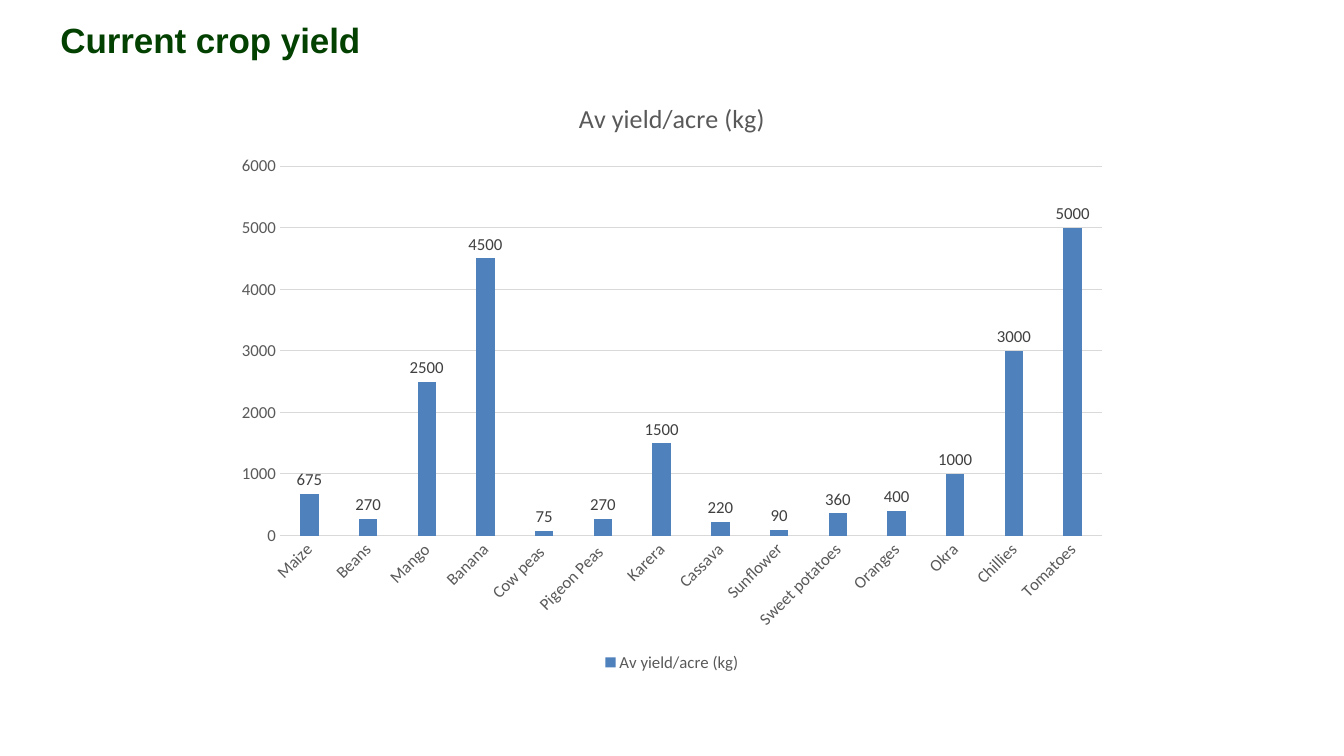
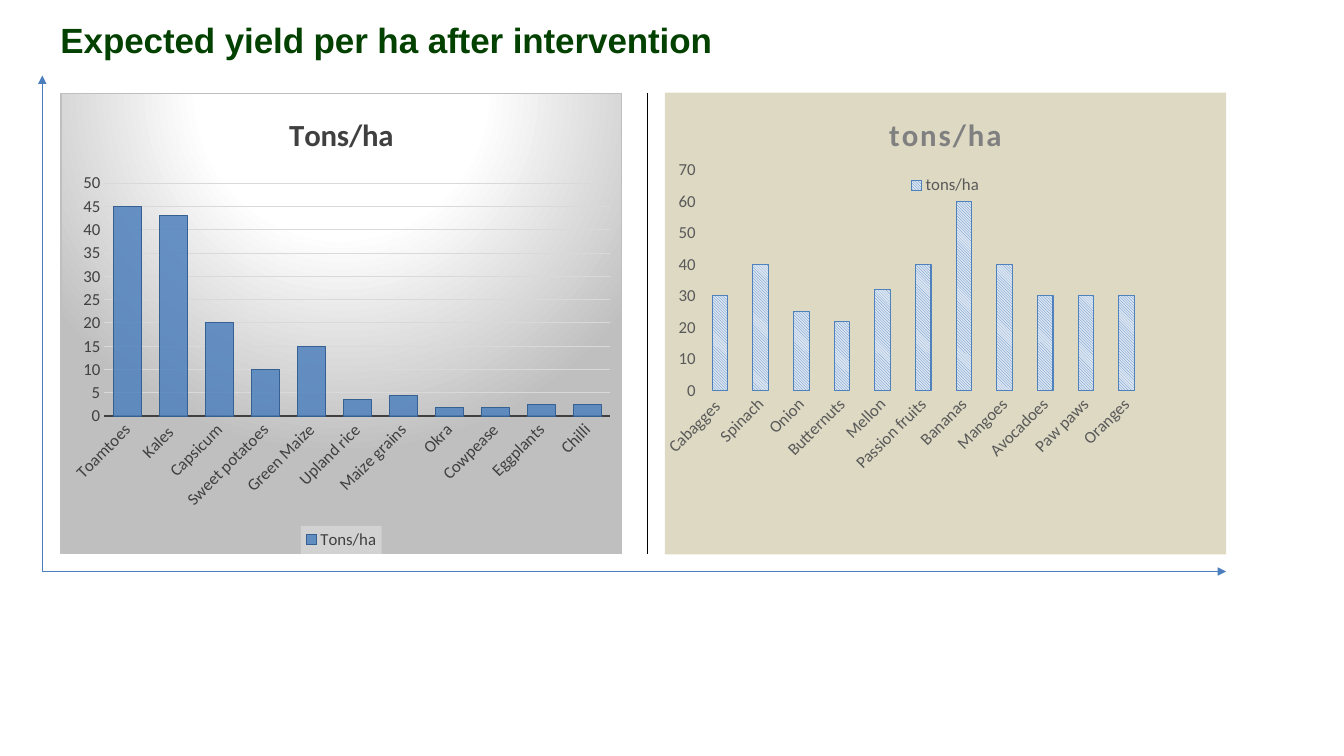
from dataclasses import dataclass
from typing import Optional

from pptx import Presentation
from pptx.chart.data import CategoryChartData
from pptx.dml.color import RGBColor
from pptx.enum.chart import XL_CHART_TYPE as ChartType
from pptx.enum.chart import XL_LABEL_POSITION as LabelPosition
from pptx.enum.chart import XL_LEGEND_POSITION as LegendPosition
from pptx.enum.chart import XL_TICK_MARK as TickMark
from pptx.enum.dml import MSO_PATTERN as Pattern
from pptx.enum.shapes import MSO_CONNECTOR as Connector
from pptx.oxml import parse_xml
from pptx.oxml.ns import nsdecls, qn
from pptx.util import Inches, Pt

# Shared look
GREEN = RGBColor(0x03, 0x41, 0x01)
BLUE = RGBColor(0x4F, 0x81, 0xBD)
DARK_BLUE = RGBColor(0x37, 0x60, 0x92)
PALE_BLUE = RGBColor(0xDC, 0xE6, 0xF2)
ARROW_BLUE = RGBColor(0x4B, 0x7E, 0xBC)
BLACK = RGBColor(0x00, 0x00, 0x00)
CHARCOAL = RGBColor(0x40, 0x40, 0x40)
SLATE = RGBColor(0x59, 0x59, 0x59)
GREY = RGBColor(0x80, 0x80, 0x80)
SILVER = RGBColor(0xBF, 0xBF, 0xBF)
GRID = RGBColor(0xD9, 0xD9, 0xD9)
WHITE = RGBColor(0xFF, 0xFF, 0xFF)
MIST = RGBColor(0xF2, 0xF2, 0xF2)
SAND = RGBColor(0xDD, 0xD9, 0xC3)

TITLE_FONT, CHART_FONT = "Arial", "Calibri"
PAGE_WIDTH, PAGE_HEIGHT = 13.33, 7.5
LEFT_MARGIN = 0.6
HAIRLINE = 0.75
NO_PAINT = "<a:noFill/>"

CURRENT_YIELD = {
    "Maize": 675, "Beans": 270, "Mango": 2500, "Banana": 4500, "Cow peas ": 75,
    "Pigeon Peas ": 270, "Karera": 1500, "Cassava": 220, "Sunflower": 90,
    "Sweet potatoes": 360, "Oranges": 400, "Okra": 1000, "Chillies": 3000,
    "Tomatoes": 5000,
}
FIELD_CROPS = {
    "Toamtoes": 45, "Kales ": 43, "Capsicum": 20, "Sweet potatoes": 10,
    "Green Maize": 15, "Upland rice": 3.5, "Maize grains": 4.5, "Okra": 1.8,
    "Cowpease": 1.8, "Eggplants": 2.5, "Chilli": 2.5,
}
FRUIT_CROPS = {
    "Cabagges ": 30, "Spinach": 40, "Onion": 25, "Butternuts": 22, "Mellon": 32,
    "Passion fruits": 40, "Bananas": 60, "Mangoes": 40, "Avocadoes": 30,
    "Paw paws": 30, "Oranges": 30,
}


@dataclass
class ChartStyle:
    """What differs from one column chart to the next."""
    top: int
    step: int
    gap: int
    overlap: int = 0
    text: RGBColor = SLATE
    title_size: float = 22
    title_color: RGBColor = SLATE
    title_bold: bool = True
    title_spacing: int = 0
    axis_line: Optional[tuple] = None
    grid: bool = True
    labels: bool = False
    legend: LegendPosition = LegendPosition.BOTTOM
    background: str = NO_PAINT
    border: str = NO_PAINT


def solid(color, alpha=100):
    return (f'<a:solidFill><a:srgbClr val="{color}">'
            f'<a:alpha val="{alpha * 1000}"/></a:srgbClr></a:solidFill>')


def glow(stops):
    marks = "".join(f'<a:gs pos="{share * 1000}"><a:srgbClr val="{color}"/></a:gs>'
                    for share, color in stops)
    return (f'<a:gradFill><a:gsLst>{marks}</a:gsLst><a:path path="circle">'
            '<a:fillToRect l="50000" t="-80000" r="50000" b="180000"/>'
            '</a:path></a:gradFill>')


def area_format(fill, line=NO_PAINT):
    return parse_xml(f'<c:spPr {nsdecls("c", "a")}>{fill}'
                     f'<a:ln w="{Pt(HAIRLINE)}">{line}</a:ln></c:spPr>')


def manual_layout(x, y, width=None, height=None):
    parts = [("xMode", "edge"), ("yMode", "edge"), ("x", x), ("y", y)]
    if width:
        parts = [("layoutTarget", "inner"), *parts, ("w", width), ("h", height)]
    body = "".join(f'<c:{name} val="{value}"/>' for name, value in parts)
    return parse_xml(f'<c:layout {nsdecls("c")}><c:manualLayout>{body}'
                     '</c:manualLayout></c:layout>')


def drop_layout(parent):
    for layout in parent.findall(qn("c:layout")):
        parent.remove(layout)


def format_font(font, size, color, name=CHART_FONT, bold=False):
    font.size, font.name, font.bold = Pt(size), name, bold
    font.color.rgb = color


def add_run(para, text, spacing=0, **style):
    span = para.add_run()
    span.text = text
    format_font(span.font, **style)
    if spacing:
        span.font._element.set("spc", str(spacing))


def format_line(line, color=None, width=HAIRLINE):
    if color is None:
        line.fill.background()
    else:
        line.color.rgb, line.width = color, Pt(width)


def add_title(page, text):
    box = page.shapes.add_textbox(Inches(LEFT_MARGIN), Inches(0.17),
                                  Inches(8.3), Inches(0.43))
    frame = box.text_frame
    frame.word_wrap = True
    frame.margin_left = frame.margin_right = frame.margin_bottom = 0
    frame.margin_top = Inches(0.01)
    add_run(frame.paragraphs[0], text, spacing=-5, size=25, color=GREEN,
            name=TITLE_FONT, bold=True)


def add_line(page, start, end, color, arrow=False):
    line = page.shapes.add_connector(Connector.STRAIGHT, *map(Inches, start + end))
    format_line(line.line, color)
    properties = line._element.spPr
    if arrow:
        properties.find(qn("a:ln")).append(
            parse_xml(f'<a:tailEnd {nsdecls("a")} type="triangle"/>'))
    properties.append(parse_xml(f'<a:effectLst {nsdecls("a")}/>'))


def format_axes(chart, style):
    for axis in (chart.category_axis, chart.value_axis):
        axis.major_tick_mark = axis.minor_tick_mark = TickMark.NONE
        format_font(axis.tick_labels.font, 12, style.text)
    format_line(chart.category_axis.format.line, *(style.axis_line or ()))
    slanted = chart.element.xpath(".//c:catAx/c:txPr/a:bodyPr")[0]
    slanted.set("rot", str(-45 * 60000))
    slanted.set("vert", "horz")

    scale = chart.value_axis
    scale.minimum_scale, scale.maximum_scale = 0, style.top
    scale.major_unit = style.step
    format_line(scale.format.line)
    scale.has_major_gridlines = style.grid
    if style.grid:
        format_line(scale.major_gridlines.format.line, GRID)


def add_column_chart(page, box, name, crops, style):
    data = CategoryChartData()
    data.categories = list(crops)
    data.add_series(name, list(crops.values()))
    chart = page.shapes.add_chart(ChartType.COLUMN_CLUSTERED,
                                  *map(Inches, box), data).chart
    format_font(chart.font, 10, BLACK)

    # Heading and legend
    chart.has_title = True
    add_run(chart.chart_title.text_frame.paragraphs[0], name,
            spacing=style.title_spacing, size=style.title_size,
            color=style.title_color, bold=style.title_bold)
    chart.has_legend = True
    chart.legend.position = style.legend
    chart.legend.include_in_layout = False
    format_font(chart.legend.font, 12, style.text)

    # Columns and axes
    format_axes(chart, style)
    plot = chart.plots[0]
    plot.vary_by_categories = False
    plot.gap_width, plot.overlap = style.gap, style.overlap
    columns = plot.series[0].format
    columns.fill.solid()
    columns.fill.fore_color.rgb = BLUE
    if style.labels:
        plot.has_data_labels = True
        plot.data_labels.show_value = True
        plot.data_labels.position = LabelPosition.OUTSIDE_END
        format_font(plot.data_labels.font, 12, CHARCOAL)

    # Background
    chart.element.find(qn("c:chart")).addnext(
        area_format(style.background, style.border))
    return chart


def build_current_yield(page):
    add_title(page, "Current crop yield")
    width, height = PAGE_WIDTH * 2 / 3, 5.93
    box = ((PAGE_WIDTH - width) / 2, 0.78, width, height)
    add_column_chart(page, box, "Av yield/acre (kg)", CURRENT_YIELD, ChartStyle(
        top=6000, step=1000, gap=219, overlap=-27, title_size=18.6,
        title_bold=False, axis_line=(GRID, HAIRLINE), labels=True))


def add_field_chart(page, box):
    chart = add_column_chart(page, box, "Tons/ha", FIELD_CROPS, ChartStyle(
        top=50, step=5, gap=65, text=CHARCOAL, title_color=CHARCOAL,
        axis_line=(CHARCOAL, 1.5), border=solid(SILVER),
        background=glow([(0, WHITE), (39, WHITE), (100, SILVER)])))
    format_line(chart.plots[0].series[0].format.line, DARK_BLUE)
    fill_color = chart.element.xpath(".//c:ser/c:spPr/a:solidFill/a:srgbClr")[0]
    fill_color.append(parse_xml(f'<a:alpha {nsdecls("a")} val="85000"/>'))
    chart.element.xpath(".//c:legend/c:overlay")[0].addnext(
        area_format(solid(MIST, 39)))


def add_fruit_chart(page, box):
    chart = add_column_chart(page, box, "tons/ha", FRUIT_CROPS, ChartStyle(
        top=70, step=10, gap=160, title_color=GREY, title_spacing=150, grid=False,
        legend=LegendPosition.TOP, background=solid(SAND)))
    columns = chart.plots[0].series[0].format
    columns.fill.patterned()
    columns.fill.pattern = Pattern.LIGHT_DOWNWARD_DIAGONAL
    columns.fill.fore_color.rgb, columns.fill.back_color.rgb = BLUE, PALE_BLUE
    format_line(columns.line, BLUE)

    # Fixed places for the plot and the legend
    plot_area = chart.element.xpath(".//c:plotArea")[0]
    drop_layout(plot_area)
    plot_area.insert(0, manual_layout(0.062, 0.167, 0.797, 0.478))
    legend = chart.element.xpath(".//c:legend")[0]
    drop_layout(legend)
    legend.find(qn("c:legendPos")).addnext(manual_layout(0.43, 0.17))


def build_expected_yield(page):
    add_title(page, "Expected yield per ha after intervention")
    top, width, height, gutter = 0.92, 5.57, 4.58, 0.42
    right = LEFT_MARGIN + width + gutter
    add_field_chart(page, (LEFT_MARGIN, top, width, height))
    add_fruit_chart(page, (right, top, width, height))

    # Arrows framing the charts, and the divider
    inset = 0.17
    bottom = top + height
    corner = (0.42, bottom + inset)
    add_line(page, corner, (corner[0], top - inset), ARROW_BLUE, arrow=True)
    add_line(page, corner, (right + width, corner[1]), ARROW_BLUE, arrow=True)
    divider = right - inset
    add_line(page, (divider, top), (divider, bottom), BLACK)


def main():
    deck = Presentation()
    deck.slide_width, deck.slide_height = Inches(PAGE_WIDTH), Inches(PAGE_HEIGHT)
    for build in (build_current_yield, build_expected_yield):
        build(deck.slides.add_slide(deck.slide_layouts[6]))
    deck.save("out.pptx")


if __name__ == "__main__":
    main()
